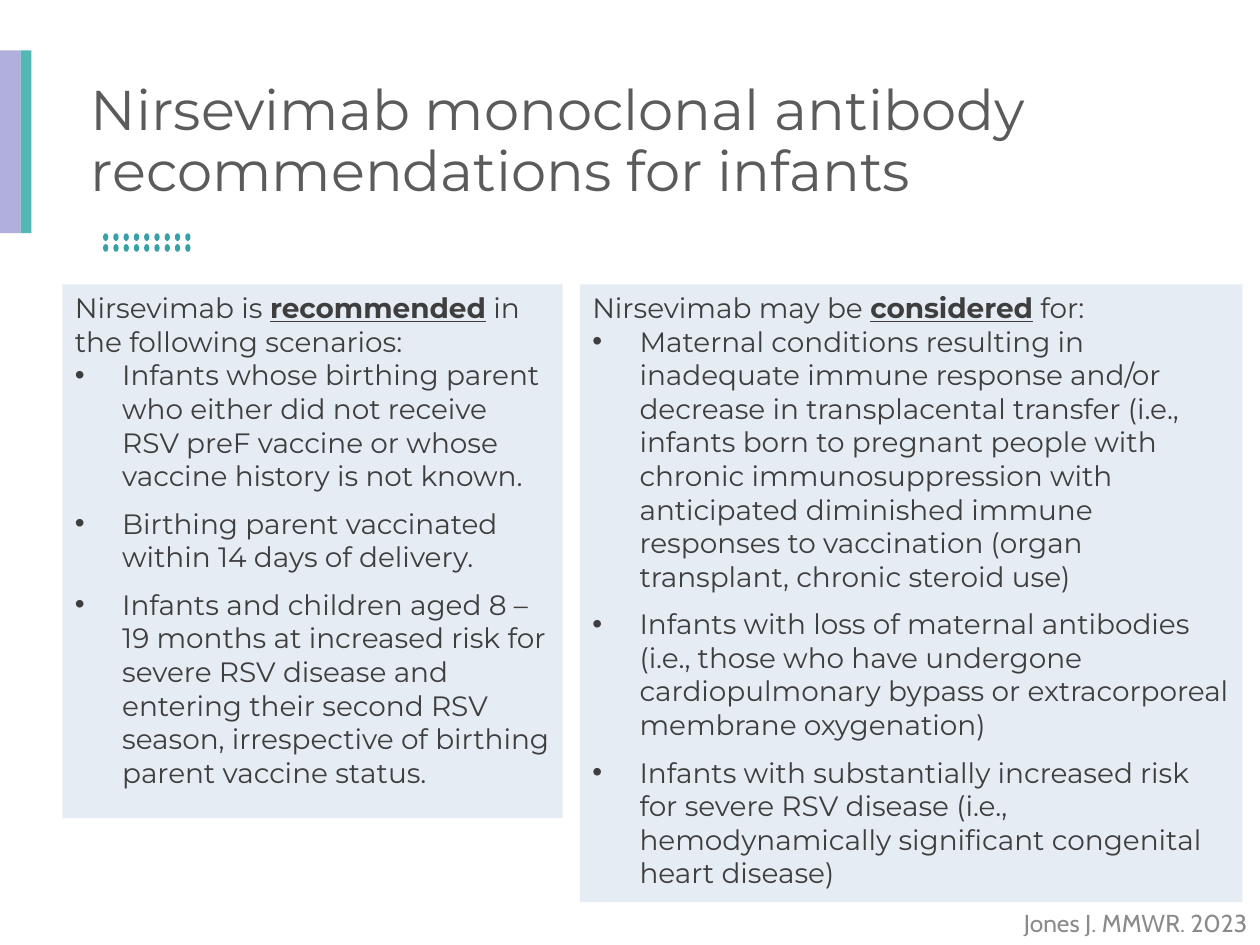
from lxml import etree
from pptx import Presentation
from pptx.dml.color import RGBColor
from pptx.enum.shapes import MSO_SHAPE
from pptx.enum.text import MSO_ANCHOR, MSO_AUTO_SIZE, PP_ALIGN
from pptx.oxml.ns import qn
from pptx.util import Pt

RECTANGLE = MSO_SHAPE.RECTANGLE
OVAL = MSO_SHAPE.OVAL
TOP = MSO_ANCHOR.TOP
MIDDLE = MSO_ANCHOR.MIDDLE
NO_AUTOFIT = MSO_AUTO_SIZE.NONE
LEFT = PP_ALIGN.LEFT
RIGHT = PP_ALIGN.RIGHT

COLORS = {
    "lavender": "B1AFDE",
    "teal": "55B7B3",
    "dot": "37A1A7",
    "panel": "E5ECF3",
    "title": "5B5B5B",
    "body": "3E3E3E",
    "citation": "8B8B8B",
}
HEADING_FONT = "Montserrat"
CITATION_FONT = "Cabin"
INDENT = 27

RECOMMENDED_LEAD = ("Nirsevimab is ", "recommended", " in the following scenarios:")
RECOMMENDED_ITEMS = [
    "Infants whose birthing parent who either did not receive RSV preF vaccine "
    "or whose vaccine history is not known.",
    "Birthing parent vaccinated within 14 days of delivery.",
    "Infants and children aged 8 – 19 months at increased risk for severe RSV "
    "disease and entering their second RSV season, irrespective of birthing "
    "parent vaccine status.",
]
CONSIDERED_LEAD = ("Nirsevimab may be ", "considered", " for:")
CONSIDERED_ITEMS = [
    "Maternal conditions resulting in inadequate immune response and/or decrease "
    "in transplacental transfer (i.e., infants born to pregnant people with "
    "chronic immunosuppression with anticipated diminished immune responses to "
    "vaccination (organ transplant, chronic steroid use)",
    "Infants with loss of maternal antibodies (i.e., those who have undergone "
    "cardiopulmonary bypass or extracorporeal membrane oxygenation)",
    "Infants with substantially increased risk for severe RSV disease (i.e., "
    "hemodynamically significant congenital heart disease)",
]


def color(name):
    return RGBColor.from_string(COLORS[name])


def place(box, left, top, width, height):
    box.left, box.top = Pt(left), Pt(top)
    box.width, box.height = Pt(width), Pt(height)


def add_filled(shapes, kind, left, top, width, height, fill):
    shape = shapes.add_shape(kind, Pt(left), Pt(top), Pt(width), Pt(height))
    shape.shadow.inherit = False
    shape.fill.solid()
    shape.fill.fore_color.rgb = color(fill)
    shape.line.fill.background()


def add_dots(page):
    group = page.shapes.add_group_shape()
    for column in range(9):
        for row in range(2):
            add_filled(group.shapes, OVAL, 58.9 + 5.87 * column,
                       133.3 + 6.2 * row, 3, 4.4, "dot")


def prepare_frame(box, anchor):
    frame = box.text_frame
    frame.word_wrap = True
    frame.auto_size = NO_AUTOFIT
    frame.vertical_anchor = anchor
    return frame


def add_span(para, text, size, tone, font=HEADING_FONT, strong=False):
    span = para.add_run()
    span.text = text
    span.font.size = Pt(size)
    span.font.name = font
    span.font.color.rgb = color(tone)
    span.font.bold = strong
    span.font.underline = strong


def set_bullet(para, character=None):
    properties = para._p.get_or_add_pPr()
    indent = INDENT if character else 0
    properties.set("marL", str(Pt(indent)))
    properties.set("indent", str(-Pt(indent)))
    if character:
        font = etree.SubElement(properties, qn("a:buFont"))
        font.set("typeface", "Arial")
        etree.SubElement(properties, qn("a:buChar")).set("char", character)
    else:
        etree.SubElement(properties, qn("a:buNone"))


def fill_panel(box, lead, items):
    box.fill.solid()
    box.fill.fore_color.rgb = color("panel")
    frame = prepare_frame(box, TOP)
    para = frame.paragraphs[0]
    set_bullet(para)
    para.space_before = Pt(0)
    for position, text in enumerate(lead):
        add_span(para, text, 16, "body", strong=position == 1)
    for item in items:
        para = frame.add_paragraph()
        set_bullet(para, "•")
        para.space_before = Pt(0)
        para.space_after = Pt(8)
        add_span(para, item, 16, "body")


def fill_title(box):
    place(box, 44.6, 29.5, 630.7, 104.4)
    para = prepare_frame(box, MIDDLE).paragraphs[0]
    para.alignment = LEFT
    para.line_spacing = 0.9
    add_span(para, "Nirsevimab monoclonal antibody recommendations for infants",
             32, "title")


def add_citation(page):
    box = page.shapes.add_textbox(Pt(360), Pt(515.5), Pt(360), Pt(24.5))
    para = prepare_frame(box, TOP).paragraphs[0]
    para.alignment = RIGHT
    add_span(para, "Jones J. MMWR. 2023", 14, "citation", CITATION_FONT)


def main():
    deck = Presentation()
    deck.slide_width, deck.slide_height = Pt(720), Pt(540)
    page = deck.slides.add_slide(deck.slide_layouts[1])

    add_filled(page.shapes, RECTANGLE, 0, 28.8, 11.8, 104.4, "lavender")
    add_filled(page.shapes, RECTANGLE, 11.8, 28.8, 6.2, 104.4, "teal")
    add_dots(page)
    fill_title(page.shapes.title)

    recommended = page.placeholders[1]
    place(recommended, 35.6, 162.5, 286, 305)
    fill_panel(recommended, RECOMMENDED_LEAD, RECOMMENDED_ITEMS)

    considered = page.shapes.add_textbox(Pt(331.4), Pt(162.5), Pt(378.6), Pt(353))
    fill_panel(considered, CONSIDERED_LEAD, CONSIDERED_ITEMS)
    add_citation(page)

    deck.save("out.pptx")


if __name__ == "__main__":
    main()
